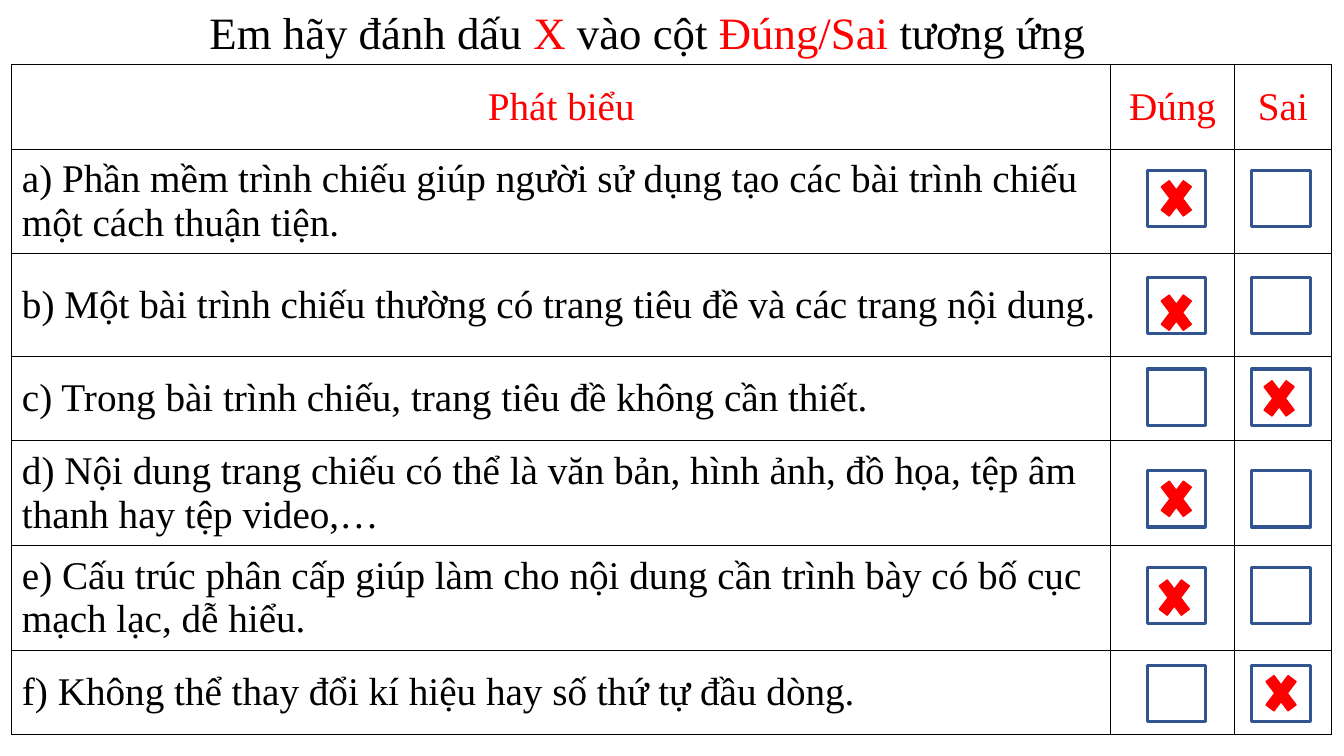
from lxml import etree
from pptx import Presentation
from pptx.dml.color import RGBColor
from pptx.enum.shapes import MSO_SHAPE as Shape
from pptx.enum.text import MSO_ANCHOR as Anchor, MSO_AUTO_SIZE as AutoSize, PP_ALIGN as Align
from pptx.oxml import parse_xml
from pptx.oxml.ns import nsdecls
from pptx.util import Cm, Pt

BLACK, RED, BLUE = "000000", "FF0000", "325491"
FONT = "Times New Roman"

# Content
TITLE = [("Em hãy đánh dấu ", BLACK), ("X ", RED), ("vào cột ", BLACK),
         ("Đúng/Sai ", RED), ("tương ứng", BLACK)]
HEADINGS = ["Phát biểu", "Đúng", "Sai"]
TRUE, FALSE = 0, 1
# Statement, answer, row height, top of tick boxes, offset of the X in its box (cm)
STATEMENTS = [
    ("a) Phần mềm trình chiếu giúp người sử dụng tạo các bài trình chiếu một cách thuận tiện.",
     TRUE, 2.59, 4.29, (0.2, 0)),
    ("b) Một bài trình chiếu thường có trang tiêu đề và các trang nội dung.",
     TRUE, 2.59, 6.99, (0.2, 0.18)),
    ("c) Trong bài trình chiếu, trang tiêu đề không cần thiết.",
     FALSE, 2.13, 9.3, (0.15, 0.03)),
    ("d) Nội dung trang chiếu có thể là văn bản, hình ảnh, đồ họa, tệp âm thanh hay tệp video,…",
     TRUE, 2.64, 11.86, (0.2, 0)),
    ("e) Cấu trúc phân cấp giúp làm cho nội dung cần trình bày có bố cục mạch lạc, dễ hiểu.",
     TRUE, 2.64, 14.3, (0.15, 0.05)),
    ("f) Không thể thay đổi kí hiệu hay số thứ tự đầu dòng.",
     FALSE, 2.13, 16.76, (0.2, 0)),
]

# Measures in cm
COLUMN_WIDTHS = [27.69, 3.12, 2.44]
ROW_HEIGHTS = [2.13] + [height for _, _, height, _, _ in STATEMENTS]
BOX_LEFTS = {TRUE: 28.91, FALSE: 31.55}
BOX_SIZE = (1.47, 1.42)
MARK_SIZE = (1.07, 1.42)


def color(hex_code):
    return RGBColor.from_string(hex_code)


def add_run(paragraph, text, size, hex_code):
    run = paragraph.add_run()
    run.text = text
    for key, value in {"name": FONT, "size": Pt(size)}.items():
        setattr(run.font, key, value)
    run.font.color.rgb = color(hex_code)


def add_borders(cell):
    properties = cell._tc.get_or_add_tcPr()
    for side in "LRTB":
        properties.append(parse_xml(
            f'<a:ln{side} {nsdecls("a")} w="12700"><a:solidFill>'
            f'<a:srgbClr val="{BLACK}"/></a:solidFill></a:ln{side}>'))


def add_figure(kind, left, top, size, line, width, fill=None):
    figure = slide.shapes.add_shape(kind, *map(Cm, (left, top, *size)))
    figure.shadow.inherit = False
    if fill:
        figure.fill.solid()
        figure.fill.fore_color.rgb = color(fill)
    else:
        figure.fill.background()
    figure.line.color.rgb = color(line)
    figure.line.width = Pt(width)


deck = Presentation()
deck.slide_width, deck.slide_height = Cm(33.87), Cm(19.05)
slide = deck.slides.add_slide(deck.slide_layouts[6])

# Title
title = slide.shapes.add_textbox(Cm(5.03), Cm(0), Cm(22.81), Cm(1.63)).text_frame
for key, value in {"word_wrap": False, "auto_size": AutoSize.SHAPE_TO_FIT_TEXT}.items():
    setattr(title, key, value)
for text, hex_code in TITLE:
    add_run(title.paragraphs[0], text, 32, hex_code)

# Table of statements
table = slide.shapes.add_table(
    len(ROW_HEIGHTS), len(COLUMN_WIDTHS), Cm(0.3), Cm(1.63),
    Cm(sum(COLUMN_WIDTHS)), Cm(sum(ROW_HEIGHTS))).table
for key in ("first_row", "horz_banding"):
    setattr(table, key, False)
for column, width in zip(table.columns, COLUMN_WIDTHS):
    column.width = Cm(width)
for row, height in zip(table.rows, ROW_HEIGHTS):
    row.height = Cm(height)
for cell in table.iter_cells():
    add_borders(cell)
    cell.fill.background()
    cell.vertical_anchor = Anchor.MIDDLE
for column, heading in enumerate(HEADINGS):
    paragraph = table.cell(0, column).text_frame.paragraphs[0]
    paragraph.alignment = Align.CENTER
    add_run(paragraph, heading, 28, RED)
for row, (statement, *_) in enumerate(STATEMENTS, 1):
    add_run(table.cell(row, 0).text_frame.paragraphs[0], statement, 28, BLACK)

# Tick boxes and answers
for _, answer, _, top, (dx, dy) in STATEMENTS:
    for left in BOX_LEFTS.values():
        add_figure(Shape.RECTANGLE, left, top, BOX_SIZE, BLUE, 2.25)
    add_figure(Shape.MATH_MULTIPLY, BOX_LEFTS[answer] + dx, top + dy, MARK_SIZE, RED, 1, RED)

deck.save("out.pptx")
